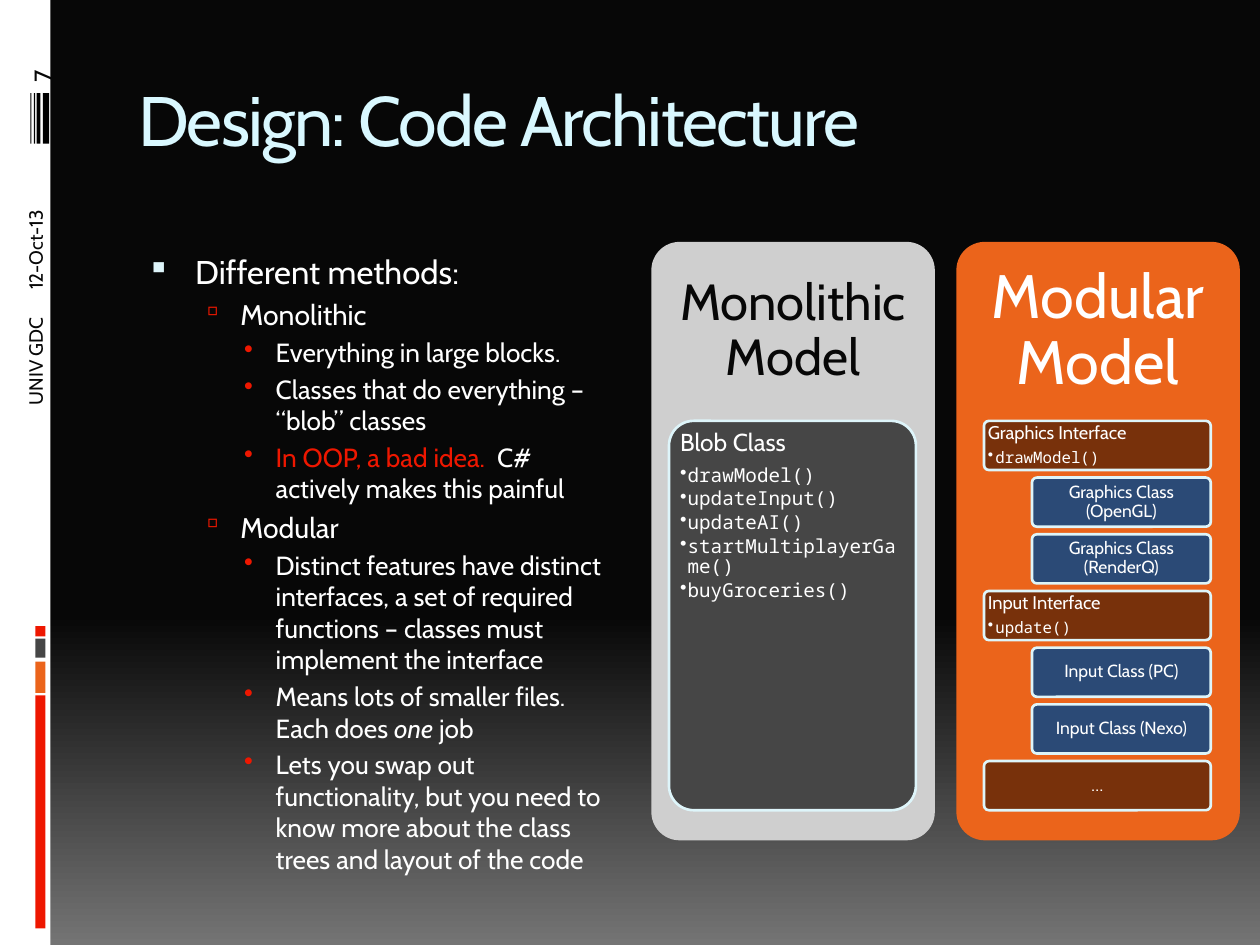
from lxml import etree
from pptx import Presentation
from pptx import util as u
from pptx.dml.color import RGBColor
from pptx.enum import shapes, text
from pptx.oxml import ns

Pt = u.Pt
SANS, MONO = "Cabin", "Noto Sans Mono"
WHITE, BLACK, RED, ORANGE = "FFFFFF", "070707", "EE1700", "EB641B"
GRAY, PALE, BROWN, BLUE = "464646", "DEF5FA", "78310B", "2B4A76"
MID, TOP, LOW = (text.MSO_ANCHOR.MIDDLE, text.MSO_ANCHOR.TOP,
                 text.MSO_ANCHOR.BOTTOM)
LEFT, MIDST, RIGHT = text.PP_ALIGN.LEFT, text.PP_ALIGN.CENTER, text.PP_ALIGN.RIGHT

# Body levels: size, left margin, hanging indent, space before, bullet
LEVELS = [
    (18.8, 32.4, 27.4, 7, ("▪", PALE, 95)),
    (16.2, 58.3, 22.3, 3.2, ("▫", RED, 90)),
    (15, 78.5, 18, 3, ("•", RED, 100)),
]
# Each point: level, then runs of (words, font changes)
POINTS = [
    (0, [("Different methods:", {})]),
    (1, [("Monolithic", {})]),
    (2, [("Everything in large blocks.", {})]),
    (2, [("Classes that do everything – “blob” classes", {})]),
    (2, [("In OOP, a bad idea. ", {"hue": RED}),
         (" C# actively makes this painful", {})]),
    (1, [("Modular", {})]),
    (2, [("Distinct features have distinct interfaces, a set of required "
          "functions – classes must implement the interface", {})]),
    (2, [("Means lots of smaller files. Each does ", {}),
         ("one", {"italic": True}), (" job", {})]),
    (2, [("Lets you swap out functionality, but you need to know more about "
          "the class trees and layout of the code", {})]),
]
BLOB = ["drawModel()", "updateInput()", "updateAI()",
        "startMultiplayerGame()", "buyGroceries()"]
# Each card: heading, method (None for a plain card), inset from the left, fill
CARDS = [
    ("Graphics Interface", "drawModel()", 0, BROWN),
    ("Graphics Class (OpenGL)", None, 27.4, BLUE),
    ("Graphics Class (RenderQ)", None, 27.4, BLUE),
    ("Input Interface", "update()", 0, BROWN),
    ("Input Class (PC)", None, 27.4, BLUE),
    ("Input Class (Nexo)", None, 27.4, BLUE),
    ("…", None, 0, BROWN),
]


def color(code):
    return RGBColor.from_string(code)


def block(page, box, fill, line=None, kind=shapes.MSO_SHAPE.RECTANGLE):
    shape = page.shapes.add_shape(kind, *map(Pt, box))
    shape.shadow.inherit = False
    shape.fill.solid()
    shape.fill.fore_color.rgb = color(fill)
    if line:
        shape.line.color.rgb = color(line)
        shape.line.width = Pt(1.5)
    else:
        shape.line.fill.background()
    return shape


def panel(page, box, fill, line=None):
    shape = block(page, box, fill, line, shapes.MSO_SHAPE.ROUNDED_RECTANGLE)
    shape.adjustments[0] = 0.1
    return shape


def frame(shape, anchor=TOP, side=7.2, edge=3.6, vert=None):
    tf = shape.text_frame
    fmt = {"word_wrap": True, "vertical_anchor": anchor,
           "margin_left": Pt(side), "margin_right": Pt(side),
           "margin_top": Pt(edge), "margin_bottom": Pt(edge)}
    for key, val in fmt.items():
        setattr(tf, key, val)
    if vert:
        tf._txBody.bodyPr.set("vert", vert)
    return tf


def label(page, box, **fmt):
    return frame(page.shapes.add_textbox(*map(Pt, box)), **fmt)


def para(tf, runs, size, hue=WHITE, face=SANS, align=LEFT, **fmt):
    """Write a paragraph, using the empty first one if there is one."""
    p = tf.paragraphs[0]
    if p.runs:
        p = tf.add_paragraph()
    p.alignment = align
    for key, val in fmt.items():
        setattr(p, key, val)
    for words, diff in runs:
        run = p.add_run()
        run.text = words
        look = {"size": Pt(size), "name": face, "italic": diff.get("italic")}
        for key, val in look.items():
            setattr(run.font, key, val)
        run.font.color.rgb = color(diff.get("hue", hue))
    return p


def bullet(p, left, hang, mark, hue, pct):
    prop = p._p.get_or_add_pPr()
    prop.set("marL", str(Pt(left)))
    prop.set("indent", str(-Pt(hang)))
    tint = etree.SubElement(prop, ns.qn("a:buClr"))
    etree.SubElement(tint, ns.qn("a:srgbClr"), val=hue)
    etree.SubElement(prop, ns.qn("a:buSzPct"), val=str(pct * 1000))
    etree.SubElement(prop, ns.qn("a:buChar"), char=mark)


def head(tf, words, size, align=MIDST, hue=WHITE):
    para(tf, [(words, {})], size, hue, align=align,
         line_spacing=0.9, space_after=Pt(size * 0.35))


def method(tf, words, size):
    p = para(tf, [(words, {})], size, face=MONO,
             line_spacing=0.9, space_after=Pt(size * 0.15))
    bullet(p, 4.3, 4.3, "•", WHITE, 100)


def back(page):
    fill = page.background.fill
    fill.gradient()
    fill.gradient_angle = 270
    for stop, (pos, hue) in zip(fill.gradient_stops,
                                [(0.65, BLACK), (1, "747474")]):
        stop.position = pos
        stop.color.rgb = color(hue)


def strip(page):
    block(page, (0, 0, 28.8, 540), WHITE)
    for y, high, hue in [(397.4, 133.2, RED), (378, 18, ORANGE),
                         (365, 10.8, GRAY), (357.8, 5.8, RED)]:
        block(page, (20.2, y, 5.8, high), hue)
    for x, wide in [(24.5, 3.6), (20.9, 2.2), (19.4, 0.7), (17.3, 0.7)]:
        block(page, (x, 53.3, wide, 28.8), "000000")
    for words, box, size, align in [
            ("12-Oct-13", (0, 84.2, 30.2, 88.6), 11, LEFT),
            ("UNIV GDC", (0, 174.2, 30.2, 178.6), 11, RIGHT),
            ("7", (0, 0, 36, 54), 14, LEFT)]:
        tf = label(page, box, anchor=LOW, vert="vert270")
        para(tf, [(words, {})], size, BLACK, align=align)


def body(page):
    tf = label(page, (72, 140.4, 288, 360))
    for level, runs in POINTS:
        size, left, hang, gap, mark = LEVELS[level]
        p = para(tf, runs, size, level=level, space_before=Pt(gap))
        bullet(p, left, hang, *mark)


def model(page, x, words, size, fill, hue, pad):
    panel(page, (x, 138.2, 162, 342), fill)
    tf = label(page, (x, 138.2, 162, 103), anchor=MID, side=pad, edge=pad)
    head(tf, words, size, hue=hue)


def blob(page):
    tf = frame(panel(page, (382.3, 240.5, 141.1, 222.5), GRAY, PALE),
               side=2.2, edge=1.4)
    head(tf, "Blob Class", 14, LEFT)
    for words in BLOB:
        method(tf, words, 11)


def cards(page):
    for i, (words, call, shift, fill) in enumerate(CARDS):
        box = (562.3 + shift, 240.5 + 32.4 * i, 129.6 - shift, 28.1)
        tf = frame(panel(page, box, fill, PALE), TOP if call else MID, 1.4, 0.6)
        if call:
            head(tf, words, 10.5, LEFT)
            method(tf, call, 9)
        else:
            head(tf, words, 10)


def main():
    deck = Presentation()
    deck.slide_width, deck.slide_height = Pt(720), Pt(540)
    page = deck.slides.add_slide(deck.slide_layouts[6])

    # Background, side strip and title
    back(page)
    strip(page)
    tf = label(page, (72, 40.3, 612, 72))
    p = para(tf, [("Design: Code Architecture", {})], 40, "D9F8FF")
    p.runs[0].font._element.set("spc", "-100")

    # Bullet points, then the two models
    body(page)
    model(page, 372.2, "Monolithic Model", 29, "CFCFCF", BLACK, 8.6)
    blob(page)
    model(page, 546.5, "Modular Model", 35, ORANGE, WHITE, 10.8)
    cards(page)
    deck.save("out.pptx")


if __name__ == "__main__":
    main()
